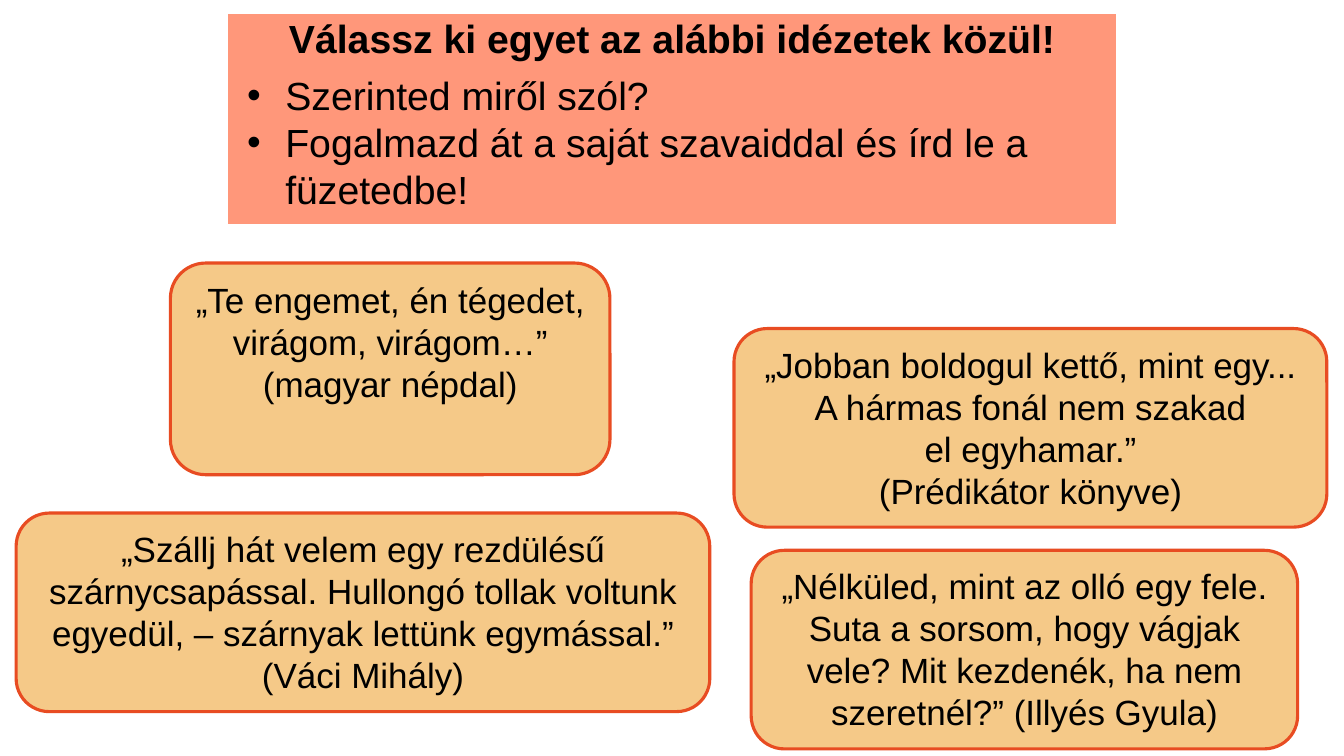
"""Build the slide that asks pupils to choose one of four quotations."""
from dataclasses import dataclass

from lxml import etree
from pptx import Presentation
from pptx.dml.color import RGBColor
from pptx.enum.shapes import MSO_SHAPE
from pptx.enum.text import MSO_ANCHOR, MSO_AUTO_SIZE, PP_ALIGN
from pptx.oxml.ns import qn
from pptx.util import Inches, Pt

ROUNDED = MSO_SHAPE.ROUNDED_RECTANGLE
TOP = MSO_ANCHOR.TOP
FIXED = MSO_AUTO_SIZE.NONE
LEFT, CENTER = PP_ALIGN.LEFT, PP_ALIGN.CENTER


@dataclass(frozen=True)
class Theme:
    """Colours and type of the slide."""
    font: str = "Arial"
    ink: RGBColor = RGBColor(0x00, 0x00, 0x00)
    panel: RGBColor = RGBColor(0xFF, 0x97, 0x7A)
    panel_edge: RGBColor = RGBColor(0xFF, 0xFF, 0xFF)
    quote: RGBColor = RGBColor(0xF1, 0xB0, 0x51)
    quote_edge: RGBColor = RGBColor(0xE8, 0x4C, 0x22)
    quote_opacity: int = 68
    task_size: int = 28
    quote_size: int = 25
    leading: float = 1.2


theme = Theme()
deck = Presentation()
deck.slide_width, deck.slide_height = Inches(13.33), Inches(7.5)
cell = deck.slide_height // 75
page = deck.slides.add_slide(deck.slide_layouts[1])


def place(box, columns_rows):
    """Set a box on the grid of square cells."""
    box.left, box.top, box.width, box.height = (round(n * cell) for n in columns_rows)


def write(box, paragraphs, size, align, bold=False, hanging=0):
    """Fill a box with paragraphs, bulleted when they have a hanging indent."""
    frame = box.text_frame
    frame.word_wrap = True
    frame.auto_size = FIXED
    frame.vertical_anchor = TOP
    for index, text in enumerate(paragraphs):
        para = frame.add_paragraph() if index else frame.paragraphs[0]
        para.alignment = align
        para.space_before = Pt(0)
        para.line_spacing = Pt(size * theme.leading)
        if hanging:
            properties = para._p.get_or_add_pPr()
            properties.set("marL", str(hanging))
            properties.set("indent", str(-hanging))
            etree.SubElement(properties, qn("a:buFont"), typeface=theme.font)
            etree.SubElement(properties, qn("a:buChar"), char="•")
        for number, line in enumerate(text.split("\n")):
            if number:
                para.add_line_break()
            span = para.add_run()
            span.text = line
            span.font.name = theme.font
            span.font.size = Pt(size)
            span.font.bold = bold
            span.font.color.rgb = theme.ink


heading = page.shapes.title
place(heading, (22.5, 1.3, 88.3, 21))
geometry = etree.SubElement(heading._element.spPr, qn("a:prstGeom"), prst="roundRect")
etree.SubElement(geometry, qn("a:avLst"))
heading.fill.solid()
heading.fill.fore_color.rgb = theme.panel
heading.line.color.rgb = theme.panel_edge
heading.line.width = Pt(1)
write(heading, ["Válassz ki egyet az alábbi idézetek közül!"], theme.task_size, CENTER, bold=True)
heading.text_frame.margin_top = Inches(0.01)

tasks = page.placeholders[1]
place(tasks, (23.5, 7.1, 86.3, 14.5))
write(tasks, [
    "Szerinted miről szól?",
    "Fogalmazd át a saját szavaiddal és írd le a füzetedbe!",
], theme.task_size, LEFT, hanging=Inches(0.38))
tasks.text_frame.margin_top = 0

quotes = [
    ((16.9, 26.1, 43.6, 21),
     ["„Te engemet, én tégedet, virágom, virágom…” (magyar népdal)"]),
    ((74.5, 54.6, 54.2, 19.7),
     ["„Nélküled, mint az olló egy fele. Suta a sorsom, hogy vágjak vele? "
      "Mit kezdenék, ha nem szeretnél?” (Illyés Gyula)"]),
    ((72.8, 32.6, 58.8, 19.7),
     ["„Jobban boldogul kettő, mint egy... A hármas fonál nem szakad\nel egyhamar.”",
      "(Prédikátor könyve)"]),
    ((1.6, 50.9, 68.8, 19.7),
     ["„Szállj hát velem egy rezdülésű szárnycsapással. Hullongó tollak voltunk "
      "egyedül, – szárnyak lettünk egymással.” (Váci Mihály)"]),
]
for columns_rows, paragraphs in quotes:
    card = page.shapes.add_shape(ROUNDED, 0, 0, cell, cell)
    place(card, columns_rows)
    card.shadow.inherit = False
    card.fill.solid()
    card.fill.fore_color.rgb = theme.quote
    colour = card._element.spPr.find(qn("a:solidFill"))[0]
    etree.SubElement(colour, qn("a:alpha"), val=str(theme.quote_opacity * 1000))
    card.line.color.rgb = theme.quote_edge
    card.line.width = Pt(2.25)
    write(card, paragraphs, theme.quote_size, CENTER)

deck.save("out.pptx")
